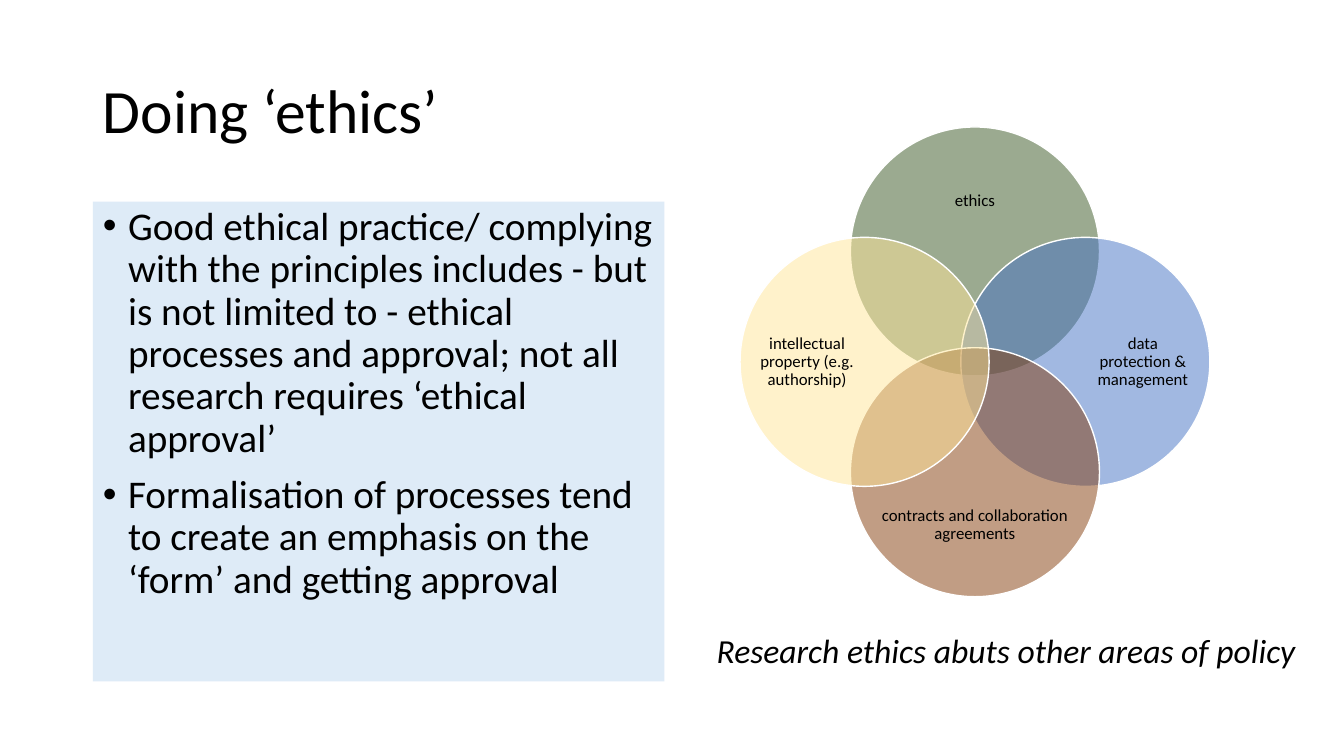
from dataclasses import dataclass

from lxml.etree import SubElement
from pptx import Presentation
from pptx.dml.color import RGBColor
from pptx.enum.shapes import MSO_SHAPE
from pptx.enum.text import MSO_ANCHOR, MSO_AUTO_SIZE, PP_ALIGN
from pptx.oxml.ns import qn
from pptx.shapes.group import GroupShape
from pptx.text.text import TextFrame, _Paragraph as Paragraph
from pptx.util import Inches, Pt

BLACK = RGBColor(0x00, 0x00, 0x00)
WHITE = RGBColor(0xFF, 0xFF, 0xFF)
PALE_BLUE = RGBColor(0xDE, 0xEB, 0xF7)
GREEN = RGBColor(0x38, 0x57, 0x23)
BLUE = RGBColor(0x44, 0x72, 0xC4)
BROWN = RGBColor(0x84, 0x3C, 0x0B)
YELLOW = RGBColor(0xFF, 0xE6, 0x99)

FONT = "Calibri"
CENTRE_X, CENTRE_Y = 9.67, 3.59
DIAMETER = 2.47
OFFSET = 1.095

BULLETS = (
    "Good ethical practice/ complying with the principles includes - but is not "
    "limited to - ethical processes and approval; not all research requires "
    "‘ethical approval’",
    "Formalisation of processes tend to create an emphasis on the ‘form’ and "
    "getting approval",
)


@dataclass(frozen=True)
class Box:
    left: float
    top: float
    width: float
    height: float

    def lengths(self) -> tuple:
        return tuple(Inches(v) for v in (self.left, self.top, self.width, self.height))


@dataclass(frozen=True)
class Area:
    """One circle of the Venn diagram; dx and dy give its direction from the centre."""
    label: str
    color: RGBColor
    dx: int
    dy: int
    label_box: Box


AREAS = (
    Area("ethics", GREEN, 0, -1, Box(8.72, 1.6, 1.9, 0.79)),
    Area("data protection & management", BLUE, 1, 0, Box(10.86, 2.64, 0.95, 1.9)),
    Area("contracts and collaboration agreements", BROWN, 0, 1,
         Box(8.72, 4.81, 1.9, 0.79)),
    Area("intellectual property (e.g. authorship)", YELLOW, -1, 0,
         Box(7.53, 2.64, 0.95, 1.9)),
)


def place(shape, box: Box) -> None:
    shape.left, shape.top, shape.width, shape.height = box.lengths()


def add_run(p: Paragraph, text: str, size: float, italic: bool = False) -> None:
    r = p.add_run()
    r.text = text
    r.font.name = FONT
    r.font.size = Pt(size)
    r.font.italic = italic
    r.font.color.rgb = BLACK


def add_bullets(tf: TextFrame) -> None:
    for i, text in enumerate(BULLETS):
        p = tf.paragraphs[0] if i == 0 else tf.add_paragraph()
        p.line_spacing = 0.9
        p.space_before = Pt(10)
        pPr = p._p.get_or_add_pPr()
        pPr.set("marL", str(Inches(0.25)))
        pPr.set("indent", str(Inches(-0.25)))
        SubElement(pPr, qn("a:buFont"), typeface="Arial")
        SubElement(pPr, qn("a:buChar"), char="•")
        add_run(p, text, 28)


def add_area(venn: GroupShape, area: Area) -> None:
    circle_box = Box(CENTRE_X + area.dx * OFFSET - DIAMETER / 2,
                     CENTRE_Y + area.dy * OFFSET - DIAMETER / 2,
                     DIAMETER, DIAMETER)
    circle = venn.shapes.add_shape(MSO_SHAPE.OVAL, *circle_box.lengths())
    circle.shadow.inherit = False
    circle.fill.solid()
    circle.fill.fore_color.rgb = area.color
    color = circle.element.spPr.find(qn("a:solidFill")).find(qn("a:srgbClr"))
    SubElement(color, qn("a:alpha"), val="50000")
    circle.line.color.rgb = WHITE
    circle.line.width = Pt(1)

    tf = venn.shapes.add_textbox(*area.label_box.lengths()).text_frame
    tf.word_wrap = True
    tf.vertical_anchor = MSO_ANCHOR.MIDDLE
    tf.margin_left = tf.margin_right = tf.margin_top = tf.margin_bottom = 0
    p = tf.paragraphs[0]
    p.alignment = PP_ALIGN.CENTER
    p.line_spacing = 0.9
    p.space_after = Pt(4.2)
    add_run(p, area.label, 12)


def main() -> None:
    prs = Presentation()
    prs.slide_width, prs.slide_height = Inches(13.33), Inches(7.5)
    s = prs.slides.add_slide(prs.slide_layouts[1])

    title = s.shapes.title
    place(title, Box(0.92, 0.4, 11.5, 1.45))
    tf = title.text_frame
    tf.auto_size = MSO_AUTO_SIZE.NONE
    tf.vertical_anchor = MSO_ANCHOR.MIDDLE
    p = tf.paragraphs[0]
    p.alignment = PP_ALIGN.LEFT
    p.line_spacing = 0.9
    add_run(p, "Doing ‘ethics’", 44)

    body = s.placeholders[1]
    place(body, Box(0.92, 2, 5.67, 4.76))
    body.fill.solid()
    body.fill.fore_color.rgb = PALE_BLUE
    body.text_frame.auto_size = MSO_AUTO_SIZE.NONE
    add_bullets(body.text_frame)

    venn = s.shapes.add_group_shape()
    for area in AREAS:
        add_area(venn, area)

    caption = s.shapes.add_textbox(*Box(7.01, 6.2, 6.03, 0.81).lengths())
    tf = caption.text_frame
    tf.word_wrap = False
    tf.auto_size = MSO_AUTO_SIZE.SHAPE_TO_FIT_TEXT
    add_run(tf.paragraphs[0], "Research ethics abuts other areas of policy", 24, italic=True)

    prs.save("out.pptx")


if __name__ == "__main__":
    main()
